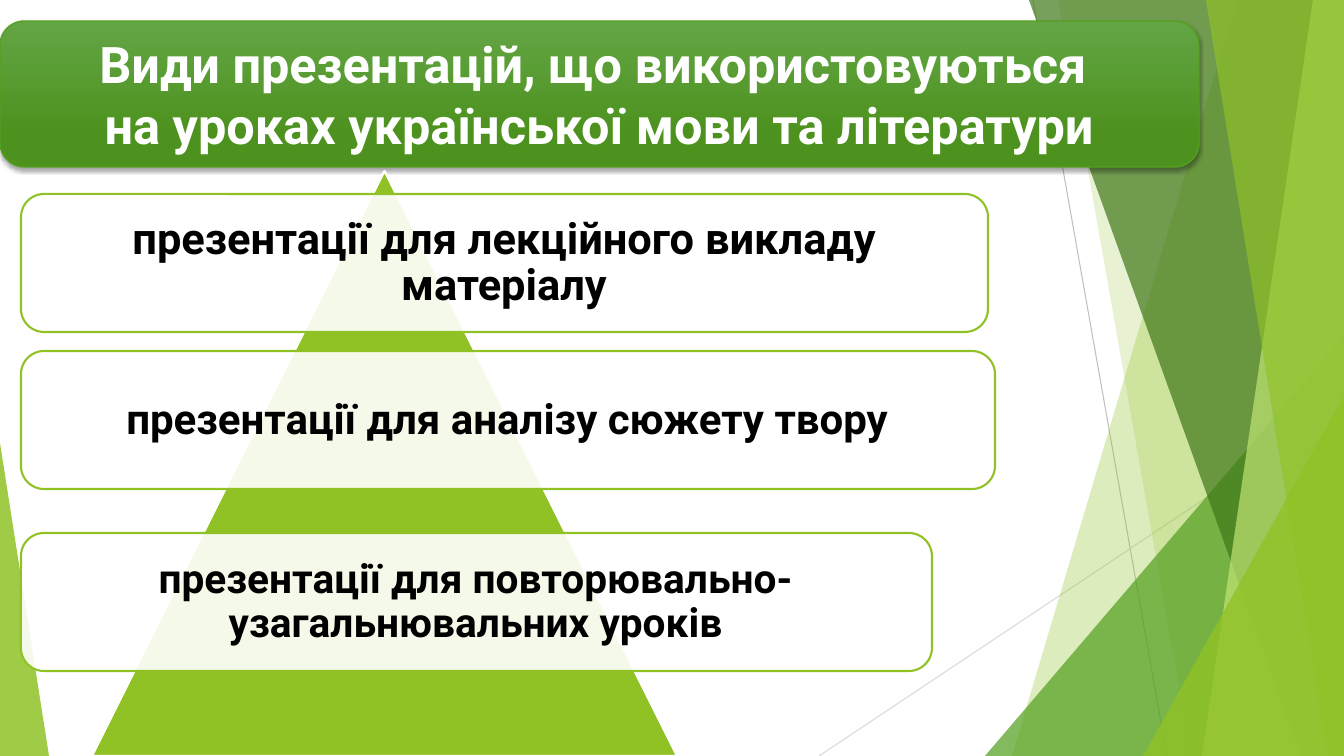
from lxml.etree import SubElement
from pptx import Presentation
from pptx.dml.color import RGBColor as RGB
from pptx.enum.shapes import MSO_CONNECTOR as LINK, MSO_SHAPE as SHAPE
from pptx.enum.text import MSO_ANCHOR as ANCHOR, MSO_AUTO_SIZE as AUTO, PP_ALIGN as ALIGN
from pptx.oxml.ns import qn
from pptx.util import Pt

SCALE = 914400 / 100.8  # EMU in one px
WIDTH, HEIGHT = 1344, 756
COLOURS = {
    "lime": "90C226", "green": "54A021", "forest": "3F7819", "pale": "C0E474",
    "title top": "63A545", "title bottom": "4D921E",
    "grey": "BFBFBF", "light grey": "D9D9D9", "white": "FFFFFF", "black": "000000",
}
RGBS = {name: RGB.from_string(value) for name, value in COLOURS.items()}


def px(*lengths):
    return [round(length * SCALE) for length in lengths]


def paint(shape, fill, opacity=100, line=None, weight=1.5):
    """Give a shape a solid fill, an optional outline and no shadow."""
    shape.shadow.inherit = False
    shape.fill.solid()
    shape.fill.fore_color.rgb = RGBS[fill]
    if opacity < 100:
        colour = shape.fill._xPr.find(qn("a:solidFill"))[0]
        SubElement(colour, qn("a:alpha"), val=str(opacity * 1000))
    if line:
        shape.line.color.rgb = RGBS[line]
        shape.line.width = Pt(weight)
    else:
        shape.line.fill.background()


deck = Presentation()
deck.slide_width, deck.slide_height = px(WIDTH, HEIGHT)
page = deck.slides.add_slide(deck.slide_layouts[6])
shapes = page.shapes

# Thin lines behind the facets
for ends, colour in (
    ((1033, 0, 1167, HEIGHT), "grey"),
    ((WIDTH, 406, 819, HEIGHT), "light grey"),
):
    ray = shapes.add_connector(LINK.STRAIGHT, *px(*ends))
    ray.line.color.rgb = RGBS[colour]
    ray.line.width = Pt(0.75)
    SubElement(ray._element.spPr, qn("a:effectLst"))

# Facets: two numbers are the left edge at top and bottom of a band that
# reaches the right side; five are a triangle's place, size and apex
for numbers, colour, opacity in (
    ((1237, 1012), "lime", 30),
    ((1058, 1191), "lime", 20),
    ((985, 336, 359, 420, 1), "green", 72),
    ((1029, 1301), "forest", 70),
    ((1313, 1202), "pale", 70),
    ((1206, 1328), "lime", 65),
    ((1143, 396, 201, 360, 1), "lime", 80),
    ((0, 443, 49, 313, 0), "lime", 85),
):
    if len(numbers) == 2:
        top_left, bottom_left = numbers
        outline = shapes.build_freeform(top_left, 0, scale=SCALE)
        outline.add_line_segments([(WIDTH, 0), (WIDTH, HEIGHT), (bottom_left, HEIGHT)])
        facet = outline.convert_to_shape()
    else:
        *place, apex = numbers
        facet = shapes.add_shape(SHAPE.ISOSCELES_TRIANGLE, *px(*place))
        facet.adjustments[0] = apex
    paint(facet, colour, opacity)

# Title banner
title = shapes.add_shape(SHAPE.ROUNDED_RECTANGLE, *px(0, 21, 1199, 146))
paint(title, "lime", line="green", weight=1)
title.fill.gradient()
title.fill.gradient_angle = 270
for stop, colour, position in zip(
    title.fill.gradient_stops, ("title top", "title bottom"), (0, 0.78)
):
    stop.color.rgb = RGBS[colour]
    stop.position = position
effects = title._element.spPr.find(qn("a:effectLst"))
shadow = SubElement(effects, qn("a:outerShdw"), blurRad=str(Pt(3)), dist=str(Pt(2)),
                    dir="5400000", rotWithShape="0")
shade = SubElement(shadow, qn("a:srgbClr"), val=COLOURS["black"])
SubElement(shade, qn("a:alpha"), val="35000")
title.text_frame.auto_size = AUTO.SHAPE_TO_FIT_TEXT
title_lines = ("Види презентацій, що використовуються ",
               "на уроках української мови та літератури")
texts = [(title.text_frame, title_lines, 36, "white", 1)]

# Pyramid with its three cards
pyramid = shapes.add_shape(SHAPE.ISOSCELES_TRIANGLE, *px(92, 171, 585, 585))
paint(pyramid, "lime", line="white")
for top, width, size, inset, label in (
    (194, 967, 31, 13, "презентації для лекційного викладу матеріалу"),
    (351, 974, 30, 12, "презентації для аналізу сюжету твору"),
    (533, 911, 29, 12, "презентації для повторювально-узагальнювальних уроків"),
):
    card = shapes.add_shape(SHAPE.ROUNDED_RECTANGLE, *px(21, top, width, 138))
    paint(card, "white", 90, line="lime")
    box = shapes.add_textbox(*px(27, top + 7, width - 13, 125))
    for side in ("left", "top", "right", "bottom"):
        setattr(box.text_frame, f"margin_{side}", px(inset)[0])
    texts.append((box.text_frame, (label,), size, "black", 0.9))

for frame, lines, size, colour, spacing in texts:
    frame.word_wrap = True
    frame.vertical_anchor = ANCHOR.MIDDLE
    for index, line in enumerate(lines):
        para = frame.add_paragraph() if index else frame.paragraphs[0]
        para.alignment = ALIGN.CENTER
        para.line_spacing = spacing
        span = para.add_run()
        span.text = line
        span.font.color.rgb = RGBS[colour]
        for name, value in {"name": "Roboto", "size": Pt(size), "bold": True}.items():
            setattr(span.font, name, value)

deck.save("out.pptx")
